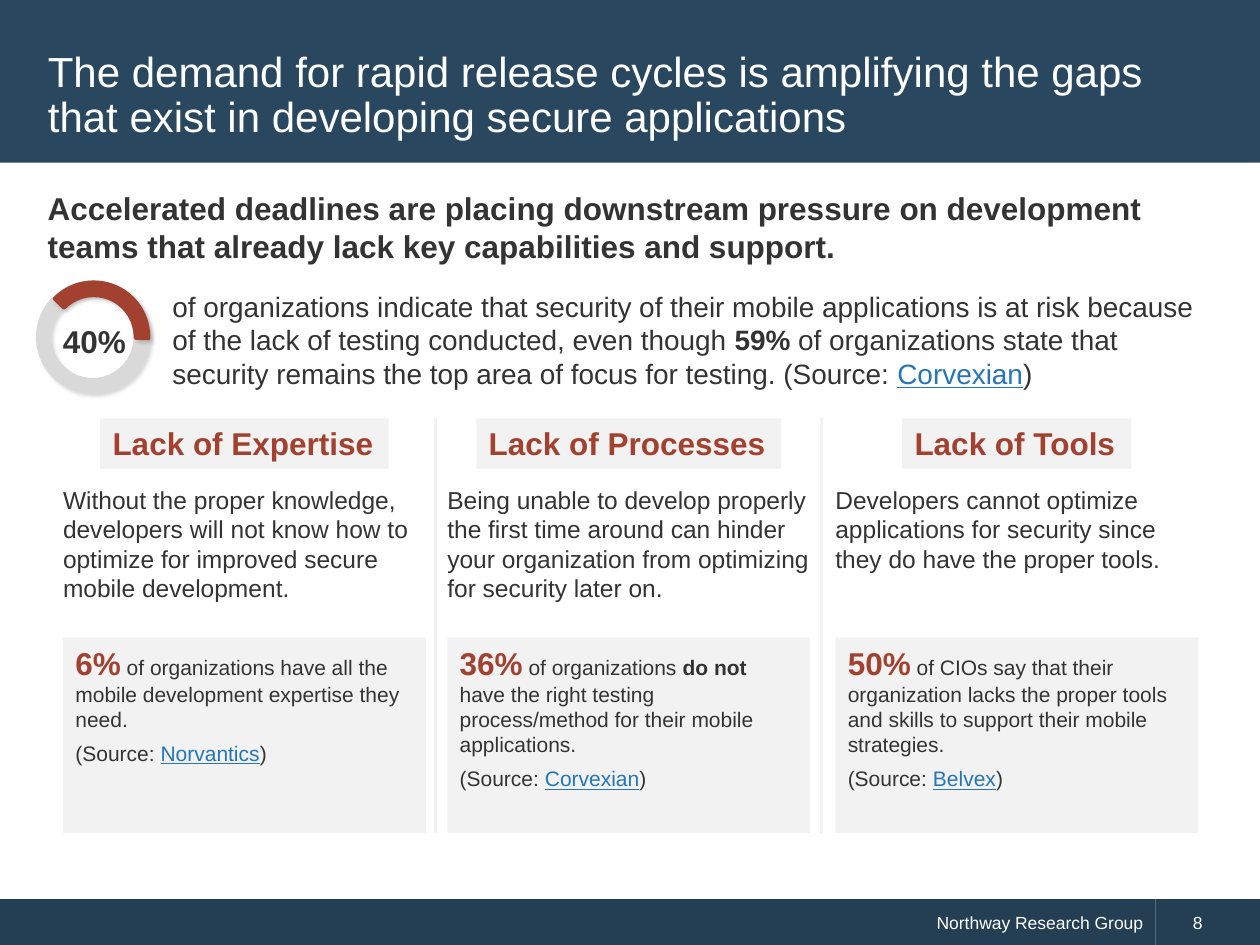
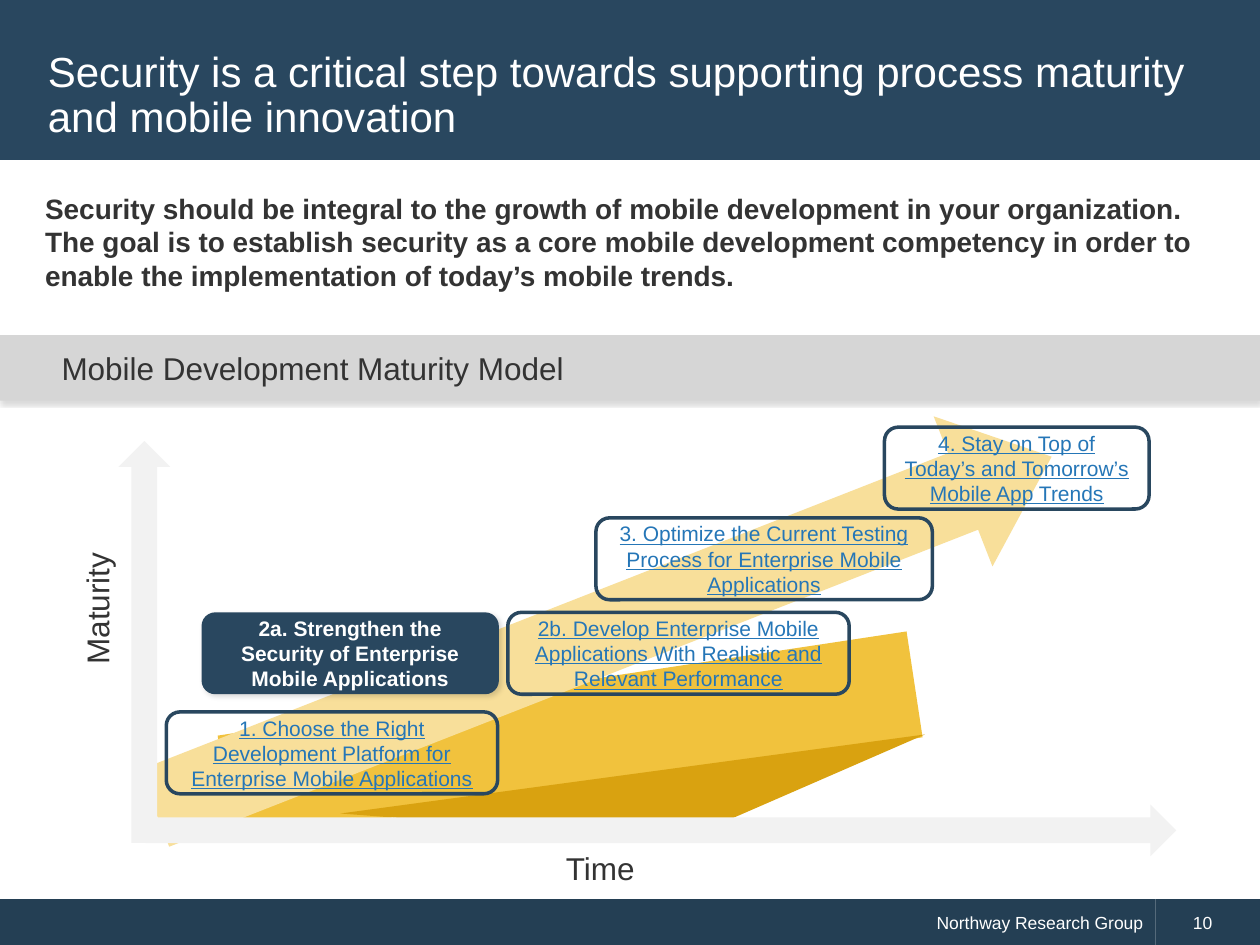
from dataclasses import dataclass
from typing import NamedTuple, Optional

from lxml.etree import SubElement
from pptx import Presentation
from pptx.dml.color import RGBColor
from pptx.enum.shapes import MSO_CONNECTOR, MSO_SHAPE as Shape
from pptx.enum.text import MSO_ANCHOR as Anchor, MSO_AUTO_SIZE, PP_ALIGN as Align
from pptx.oxml.ns import qn
from pptx.util import Inches, Pt

COLS, ROWS = 100, 75
WIDTH, HEIGHT = Inches(10), Inches(7.5)
FONT = "Arial"
COLORS = {
    "navy": "29475F", "footer": "243F54", "white": "FFFFFF", "text": "333333",
    "red": "A24130", "link": "2576B7", "panel": "F2F2F2", "ring": "D9D9D9",
    "strip": "D6D6D6", "gold": "F1C23D", "pale_gold": "F8DF9A", "dark_gold": "D9A210",
}
PUBLISHER = "Northway Research Group"


def rgb(name: str) -> RGBColor:
    return RGBColor.from_string(COLORS[name])


def x(cols: float) -> int:
    return round(WIDTH * cols / COLS)


def y(rows: float) -> int:
    return round(HEIGHT * rows / ROWS)


class Box(NamedTuple):
    """A place on the grid, in columns and rows."""
    col: float
    row: float
    cols: float
    rows: float

    def emu(self) -> tuple[int, int, int, int]:
        return x(self.col), y(self.row), x(self.cols), y(self.rows)


class Run(NamedTuple):
    text: str
    size: float
    color: str = "text"
    bold: bool = False
    underline: bool = False


class Shadow(NamedTuple):
    blur: float
    distance: float
    angle: int


@dataclass(frozen=True)
class Look:
    fill: Optional[str] = None
    line: Optional[str] = None
    weight: float = 2
    shadow: Optional[Shadow] = None
    rotation: float = 0
    adjust: tuple[float, ...] = ()


@dataclass(frozen=True)
class Gap:
    """One column of the capability gaps."""
    left: float
    heading: str
    heading_cols: float
    body: str
    share: str
    finding: tuple[Run, ...]
    source: str


@dataclass(frozen=True)
class Step:
    box: Box
    text: str
    current: bool = False


TITLE_BOX = Box(2.8, 2.9, 94.3, 9.4)
CARD_COLS = 28.8
GAPS = [
    Gap(5, "Lack of Expertise", 22.9,
        "Without the proper knowledge, developers will not know how to optimize "
        "for improved secure mobile development.",
        "6%", (Run("of organizations have all the mobile development expertise they need.", 12),),
        "Norvantics"),
    Gap(35.5, "Lack of Processes", 24.2,
        "Being unable to develop properly the first time around can hinder your "
        "organization from optimizing for security later on.",
        "36%", (Run("of organizations ", 12), Run("do not ", 12, bold=True),
                Run("have the right testing process/method for their mobile applications.", 12)),
        "Corvexian"),
    Gap(66.3, "Lack of Tools", 18.2,
        "Developers cannot optimize applications for security since they do have "
        "the proper tools.",
        "50%", (Run("of CIOs say that their organization lacks the proper tools and skills "
                    "to support their mobile strategies.", 12),),
        "Belvex"),
]
STEP_ROWS = 6.5
STEPS = [
    Step(Box(13.2, 56.5, 26.3, STEP_ROWS),
         "1. Choose the Right Development Platform for Enterprise Mobile Applications"),
    Step(Box(47.3, 41.1, 26.7, STEP_ROWS),
         "3. Optimize the Current Testing Process for Enterprise Mobile Applications"),
    Step(Box(16, 48.6, 23.6, STEP_ROWS),
         "2a. Strengthen the Security of Enterprise Mobile Applications", current=True),
    Step(Box(70.2, 33.9, 21, STEP_ROWS),
         "4. Stay on Top of Today’s and Tomorrow’s Mobile App Trends"),
    Step(Box(40.3, 48.6, 27.1, STEP_ROWS),
         "2b. Develop Enterprise Mobile Applications With Realistic and Relevant Performance"),
]


def apply(target, values: dict) -> None:
    for name, value in values.items():
        setattr(target, name, value)


def write(sp, paragraphs: list[list[Run]], para: Optional[dict] = None,
          frame: Optional[dict] = None, indent: float = 0) -> None:
    """Fill a shape with runs; para and frame override the text defaults."""
    tf = sp.text_frame
    apply(tf, {"word_wrap": True, "auto_size": MSO_AUTO_SIZE.NONE,
               "vertical_anchor": Anchor.TOP, **(frame or {})})
    for i, runs in enumerate(paragraphs):
        p = tf.add_paragraph() if i else tf.paragraphs[0]
        apply(p, {"alignment": Align.LEFT, "space_before": Pt(5 if i else 0), **(para or {})})
        if indent:
            p._p.get_or_add_pPr().set("marL", str(x(indent)))
        for run in runs:
            r = p.add_run()
            r.text = run.text
            apply(r.font, {"name": FONT, "size": Pt(run.size), "bold": run.bold,
                           "underline": run.underline})
            r.font.color.rgb = rgb(run.color)


def add_shape(slide, kind: Shape, box: Box, look: Look):
    sp = slide.shapes.add_shape(kind, *box.emu())
    sp.rotation = look.rotation
    for i, value in enumerate(look.adjust):
        sp.adjustments[i] = value
    if look.fill:
        sp.fill.solid()
        sp.fill.fore_color.rgb = rgb(look.fill)
    else:
        sp.fill.background()
    if look.line:
        sp.line.color.rgb = rgb(look.line)
        sp.line.width = Pt(look.weight)
    else:
        sp.line.fill.background()
    sp.shadow.inherit = False
    if look.shadow:
        add_shadow(sp, look.shadow)
    return sp


def add_shadow(sp, shadow: Shadow) -> None:
    effects = sp._element.spPr.find(qn("a:effectLst"))
    outer = SubElement(effects, qn("a:outerShdw"), blurRad=str(Pt(shadow.blur)),
                       dist=str(Pt(shadow.distance)), dir=str(shadow.angle * 60000),
                       algn="tl", rotWithShape="0")
    color = SubElement(outer, qn("a:srgbClr"), val="000000")
    SubElement(color, qn("a:alpha"), val="15000")


def add_text(slide, box: Box, runs: list[Run], **options):
    sp = slide.shapes.add_textbox(*box.emu())
    write(sp, [runs], **options)
    return sp


def add_divider(slide, col: float, top: float, bottom: float) -> None:
    cxn = slide.shapes.add_connector(MSO_CONNECTOR.STRAIGHT, x(col), y(top), x(col), y(bottom))
    cxn.line.color.rgb = rgb("panel")
    cxn.line.width = Pt(1.75)
    SubElement(cxn._element.spPr, qn("a:effectLst"))


def add_footer(slide, number: int) -> None:
    middle = {"vertical_anchor": Anchor.MIDDLE}
    look = Look("footer")
    name = add_shape(slide, Shape.RECTANGLE, Box(0, 71.35, 91.7, 3.65), look)
    write(name, [[Run(PUBLISHER, 10, "white")]], {"alignment": Align.RIGHT}, middle)
    page = add_shape(slide, Shape.RECTANGLE, Box(91.7, 71.35, 8.3, 3.65), look)
    write(page, [[Run(str(number), 10, "white")]], frame=middle, indent=2)


def add_title(slide, text: str, band_rows: float) -> None:
    """Draw the title band and lift the title placeholder above it."""
    add_shape(slide, Shape.RECTANGLE, Box(0, 0, COLS, band_rows), Look("navy"))
    title = slide.shapes.title
    apply(title, dict(zip(("left", "top", "width", "height"), TITLE_BOX.emu())))
    write(title, [[Run(text, 24, "white")]], {"line_spacing": Pt(26)},
          {"vertical_anchor": Anchor.MIDDLE})
    slide.shapes._spTree.append(title._element)


def source_runs(source: str, size: float, lead: str = "") -> list[Run]:
    return [Run(f"{lead}(Source: ", size), Run(source, size, "link", underline=True),
            Run(")", size)]


def add_gap(slide, gap: Gap) -> None:
    heading_left = gap.left + (CARD_COLS - gap.heading_cols) / 2
    heading = add_shape(slide, Shape.RECTANGLE, Box(heading_left, 33.2, gap.heading_cols, 4),
                        Look("panel"))
    write(heading, [[Run(gap.heading, 18, "red", True)]], frame={"word_wrap": False})
    add_text(slide, Box(gap.left, 38, CARD_COLS, 10.4), [Run(gap.body, 14)],
             frame={"margin_left": 0, "margin_right": 0})
    card = add_shape(slide, Shape.RECTANGLE, Box(gap.left, 50.6, CARD_COLS, 15.5), Look("panel"))
    write(card, [[Run(gap.share, 18, "red", True), Run(" ", 12), *gap.finding],
                 source_runs(gap.source, 12)])


def build_gaps_slide(slide) -> None:
    add_footer(slide, 8)
    add_title(slide, "The demand for rapid release cycles is amplifying the gaps that exist "
                     "in developing secure applications", 12.9)
    add_text(slide, Box(2.8, 14.5, 94.6, 7.1), [
        Run("Accelerated deadlines are placing downstream pressure on development teams "
            "that already lack key capabilities and support.", 18, bold=True)])
    add_text(slide, Box(12.7, 22.3, 83.9, 9.3), [
        Run("of organizations indicate that security of their mobile applications is at risk "
            "because of the lack of testing conducted, even though ", 16),
        Run("59%", 16, bold=True),
        *source_runs("Corvexian", 16, " of organizations state that security remains the top "
                                      "area of focus for testing. ")],
        frame={"vertical_anchor": Anchor.MIDDLE})
    soft = Shadow(2, 2, 45)
    ring = Box(3, 22.4, 8.7, 8.7)
    add_shape(slide, Shape.DONUT, ring, Look("ring", "ring", shadow=soft, adjust=(0.11,)))
    add_shape(slide, Shape.BLOCK_ARC, ring._replace(col=3.1),
              Look("red", "red", shadow=soft, adjust=(134.57, 0.91, 0.12)))
    add_text(slide, Box(4, 25.1, 7.6, 4), [Run("40%", 18, bold=True)])
    for gap in GAPS:
        add_gap(slide, gap)
    for col in (34.6, 65.2):
        add_divider(slide, col, 33.2, 66.1)


def add_step(slide, step: Step) -> None:
    if step.current:
        look, run = Look("navy", shadow=Shadow(3, 2, 45)), Run(step.text, 12, "white", True)
    else:
        look, run = Look(line="navy"), Run(step.text, 12, "link", underline=True)
    sp = add_shape(slide, Shape.ROUNDED_RECTANGLE, step.box, look)
    write(sp, [[run]], {"alignment": Align.CENTER}, {"vertical_anchor": Anchor.MIDDLE})


def build_maturity_slide(slide) -> None:
    add_footer(slide, 10)
    add_shape(slide, Shape.RECTANGLE, Box(17.6, 54.2, 55.3, 8.5), Look("gold", rotation=351.4))
    add_shape(slide, Shape.LEFT_ARROW, Box(9.6, 43.8, 76.5, 12.8),
              Look("pale_gold", rotation=158.6, adjust=(0.51, 0.59)))
    add_shape(slide, Shape.ISOSCELES_TRIANGLE, Box(27.2, 61.4, 46.8, 5.7),
              Look("dark_gold", rotation=172.3, adjust=(0.43,)))
    add_title(slide, "Security is a critical step towards supporting process maturity and "
                     "mobile innovation", 12.7)
    add_text(slide, Box(2.6, 14.7, 94.8, 9.1), [
        Run("Security should be integral to the growth of mobile development in your "
            "organization. The goal is to establish security as a core mobile development "
            "competency in order to enable the implementation of today’s mobile trends.",
            16, bold=True)])
    strip = add_shape(slide, Shape.RECTANGLE, Box(0, 26.6, COLS, 5.2),
                      Look("strip", shadow=Shadow(2, 2, 90)))
    write(strip, [[Run("Mobile Development Maturity Model", 18)]],
          frame={"vertical_anchor": Anchor.MIDDLE}, indent=3.9)
    for step in STEPS:
        add_step(slide, step)
    add_shape(slide, Shape.UP_ARROW, Box(50.4, 25, 4.1, 81.8), Look("panel", rotation=90))
    add_shape(slide, Shape.UP_ARROW, Box(9.4, 35, 4.1, 31.9), Look("panel"))
    centred = {"alignment": Align.CENTER}
    maturity = add_text(slide, Box(5.7, 37.2, 5, 22.2), [Run("Maturity", 18)], para=centred)
    maturity.text_frame._txBody.bodyPr.set("vert", "vert270")
    add_text(slide, Box(38.3, 66.9, 18.7, 4), [Run("Time", 18)], para=centred)


def main() -> None:
    prs = Presentation()
    apply(prs, {"slide_width": WIDTH, "slide_height": HEIGHT})
    title_only = prs.slide_layouts[5]
    for build in (build_gaps_slide, build_maturity_slide):
        build(prs.slides.add_slide(title_only))
    prs.save("out.pptx")


if __name__ == "__main__":
    main()
